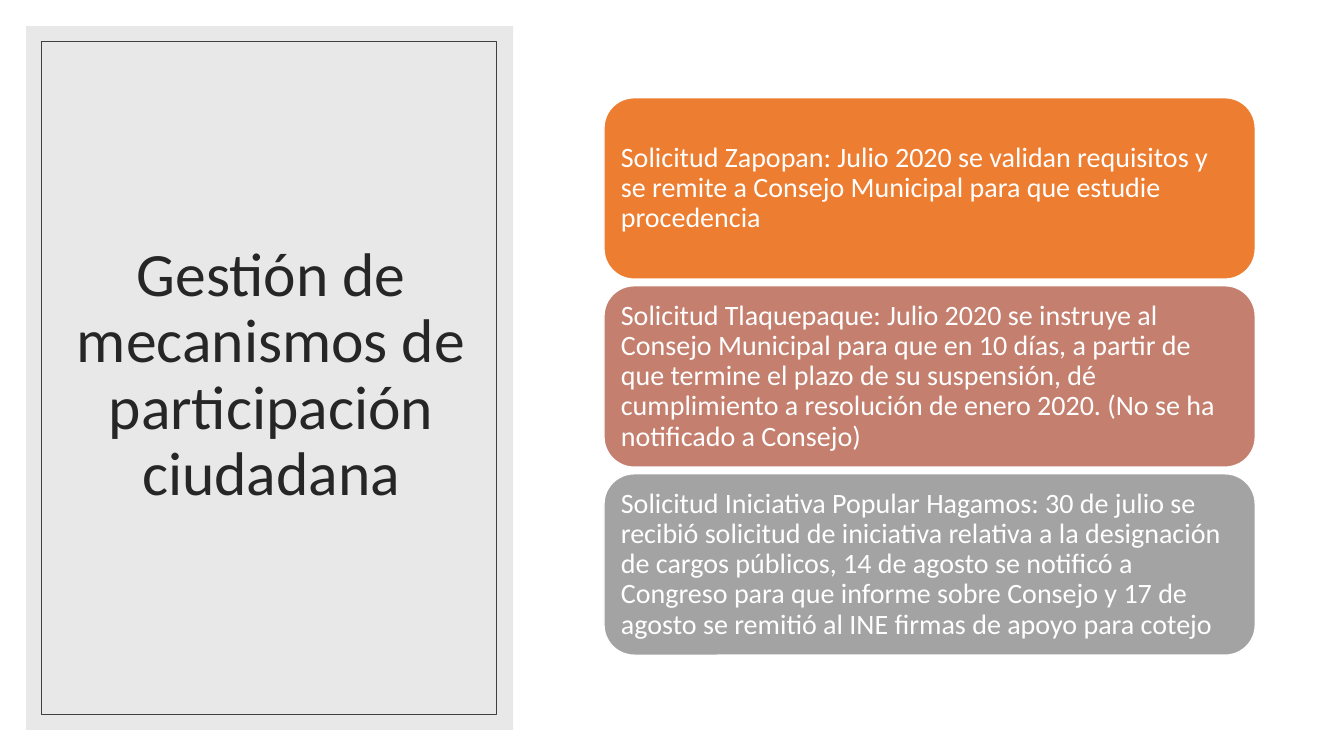
"""Build a slide with a framed title and a stack of three request cards."""
import dataclasses
import typing

import lxml.etree
import pptx
import pptx.dml.color
import pptx.enum.shapes
import pptx.enum.text
import pptx.oxml.ns
import pptx.slide
import pptx.util

WIDE = pptx.util.Inches(13.33)
HIGH = pptx.util.Inches(7.5)
KIND = pptx.enum.shapes.MSO_SHAPE
ALIGN = pptx.enum.text.PP_ALIGN


@dataclasses.dataclass(frozen=True)
class Theme:
    font: str = "Calibri"
    white: str = "FFFFFF"
    panel: str = "D9D9D9"
    frame: str = "404040"
    ink: str = "262626"
    cards: tuple[str, ...] = ("ED7D31", "C47F6E", "A3A3A3")
    title: int = 44
    body: int = 20
    lead: float = 0.9
    after: int = 7
    inset: float = 0.08


class Area(typing.NamedTuple):
    left: float
    top: float
    width: float
    height: float

    def place(self) -> tuple[int, int, int, int]:
        return (int(WIDE * self.left / 100), int(HIGH * self.top / 100),
                int(WIDE * self.width / 100), int(HIGH * self.height / 100))


@dataclasses.dataclass(frozen=True)
class Block:
    area: Area
    kind: KIND = KIND.RECTANGLE
    fill: str | None = None
    alpha: int = 100
    line: str | None = None
    weight: float = 1


THEME = Theme()
PANEL = Block(Area(1.95, 3.47, 36.23, 93.07), fill=THEME.panel, alpha=60)
FRAME = Block(Area(3.08, 5.47, 33.83, 89.07), line=THEME.frame, weight=0.5)
TITLE = Area(4.73, 8.13, 30.91, 83.2)
FIRST = Area(44.94, 12.93, 48.46, 24)
STEP = 24.87
HEAD = "Gestión de mecanismos de participación ciudadana"
NOTES = (
    "Solicitud Zapopan: Julio 2020 se validan requisitos y se remite a "
    "Consejo Municipal para que estudie procedencia",
    "Solicitud Tlaquepaque: Julio 2020 se instruye al Consejo Municipal para "
    "que en 10 días, a partir de que termine el plazo de su suspensión, dé "
    "cumplimiento a resolución de enero 2020. (No se ha notificado a Consejo)",
    "Solicitud Iniciativa Popular Hagamos: 30 de julio se recibió solicitud "
    "de iniciativa relativa a la designación de cargos públicos, 14 de agosto "
    "se notificó a Congreso para que informe sobre Consejo y 17 de agosto se "
    "remitió al INE firmas de apoyo para cotejo",
)


def tint(code: str) -> pptx.dml.color.RGBColor:
    return pptx.dml.color.RGBColor.from_string(code)


def draw(slide: pptx.slide.Slide, block: Block) -> typing.Any:
    shape = slide.shapes.add_shape(block.kind, *block.area.place())
    shape.shadow.inherit = False
    if block.fill is None:
        shape.fill.background()
    else:
        shape.fill.solid()
        shape.fill.fore_color.rgb = tint(block.fill)
    if block.alpha < 100:
        name = pptx.oxml.ns.qn("a:srgbClr")
        color = next(shape.element.spPr.iter(name))
        alpha = lxml.etree.SubElement(color, pptx.oxml.ns.qn("a:alpha"))
        alpha.set("val", str(block.alpha * 1000))
    if block.line is None:
        shape.line.fill.background()
    else:
        shape.line.color.rgb = tint(block.line)
        shape.line.width = pptx.util.Pt(block.weight)
    return shape


def write(shape: typing.Any, text: str, size: int, color: str,
          align: ALIGN) -> typing.Any:
    frame = shape.text_frame
    frame.word_wrap = True
    frame.vertical_anchor = pptx.enum.text.MSO_ANCHOR.MIDDLE
    para = frame.paragraphs[0]
    para.alignment = align
    para.line_spacing = THEME.lead
    run = para.add_run()
    run.text = text
    run.font.name = THEME.font
    run.font.size = pptx.util.Pt(size)
    run.font.color.rgb = tint(color)
    return frame


def card(slide: pptx.slide.Slide, row: int, text: str, fill: str) -> None:
    area = FIRST._replace(top=FIRST.top + row * STEP)
    shape = draw(slide, Block(area, KIND.ROUNDED_RECTANGLE, fill,
                              line=THEME.white))
    frame = write(shape, text, THEME.body, THEME.white, ALIGN.LEFT)
    frame.paragraphs[0].space_after = pptx.util.Pt(THEME.after)
    inset = pptx.util.Inches(THEME.inset)
    frame.margin_left = frame.margin_right = inset
    frame.margin_top = frame.margin_bottom = inset


def main() -> None:
    deck = pptx.Presentation()
    deck.slide_width, deck.slide_height = WIDE, HIGH
    slide = deck.slides.add_slide(deck.slide_layouts[6])
    slide.background.fill.solid()
    slide.background.fill.fore_color.rgb = tint(THEME.white)
    draw(slide, PANEL)
    title = slide.shapes.add_textbox(*TITLE.place())
    write(title, HEAD, THEME.title, THEME.ink, ALIGN.CENTER)
    draw(slide, FRAME)
    for row, (text, fill) in enumerate(zip(NOTES, THEME.cards)):
        card(slide, row, text, fill)
    deck.save("out.pptx")


if __name__ == "__main__":
    main()
